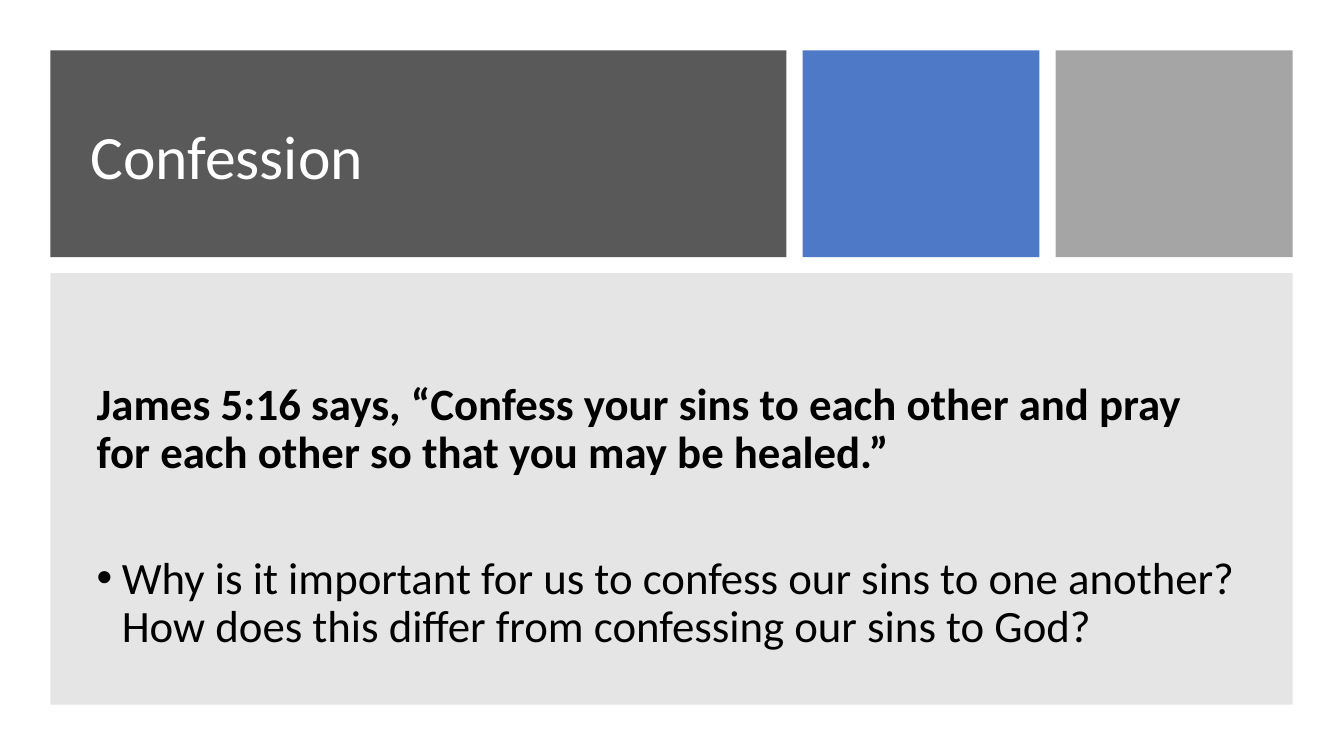
from lxml.etree import SubElement
from pptx import Presentation
from pptx.dml.color import RGBColor
from pptx.enum.shapes import MSO_SHAPE
from pptx.enum.text import MSO_ANCHOR
from pptx.oxml.ns import qn
from pptx.util import Inches, Pt

TITLE = "Confession"
VERSE = "James 5:16 says, “Confess your sins to each other and pray for each other so that you may be healed.”"
QUESTION = (
    "Why is it important for us to confess our sins to one another? "
    "How does this differ from confessing our sins to God?"
)

THEME = {
    "font": "Calibri",
    "title_size": 44,
    "body_size": 32,
    "title_color": "FFFFFF",
    "body_color": "000000",
    "panel": ("808080", 20),
}
TOP_TILES = [
    (7.3, "595959", 100),
    (2.35, "4472C4", 95),
    (2.35, "A5A5A5", 100),
]
MARGIN = 0.5
GAP = 0.16
TILE_HEIGHT = 2.05
PANEL_HEIGHT = 4.28
BULLET_INDENT = 0.25


def add_panel(slide, left, top, width, height, color, opacity):
    shape = slide.shapes.add_shape(
        MSO_SHAPE.RECTANGLE, Inches(left), Inches(top), Inches(width), Inches(height)
    )
    shape.shadow.inherit = False
    shape.line.fill.background()
    shape.fill.solid()
    shape.fill.fore_color.rgb = RGBColor.from_string(color)
    if opacity < 100:
        color_element = shape.fill._xPr.find(qn("a:solidFill"))[0]
        SubElement(color_element, qn("a:alpha"), val=str(opacity * 1000))


def add_text_frame(slide, left, top, width, height):
    box = slide.shapes.add_textbox(Inches(left), Inches(top), Inches(width), Inches(height))
    frame = box.text_frame
    frame.word_wrap = True
    frame.vertical_anchor = MSO_ANCHOR.MIDDLE
    return frame


def write(paragraph, text, size, color, bold=False, space_before=0, bullet=False):
    paragraph.line_spacing = 0.9
    paragraph.space_before = Pt(space_before)
    run = paragraph.add_run()
    run.text = text
    run.font.name = THEME["font"]
    run.font.size = Pt(size)
    run.font.bold = bold
    run.font.color.rgb = RGBColor.from_string(color)
    if bullet:
        properties = paragraph._p.get_or_add_pPr()
        properties.set("marL", str(Inches(BULLET_INDENT)))
        properties.set("indent", str(-Inches(BULLET_INDENT)))
        SubElement(properties, qn("a:buFont"), typeface="Arial")
        SubElement(properties, qn("a:buChar"), char="•")


def main():
    presentation = Presentation()
    presentation.slide_width = Inches(13.33)
    presentation.slide_height = Inches(7.5)
    slide = presentation.slides.add_slide(presentation.slide_layouts[6])

    left = MARGIN
    for width, color, opacity in TOP_TILES:
        add_panel(slide, left, MARGIN, width, TILE_HEIGHT, color, opacity)
        left += width + GAP
    panel_width = left - GAP - MARGIN
    panel_top = MARGIN + TILE_HEIGHT + GAP
    add_panel(slide, MARGIN, panel_top, panel_width, PANEL_HEIGHT, *THEME["panel"])

    title = add_text_frame(slide, 0.8, 0.8, 6.66, 1.56)
    write(title.paragraphs[0], TITLE, THEME["title_size"], THEME["title_color"])

    body = add_text_frame(slide, 0.86, 3.61, 11.59, 3.04)
    body_format = {"size": THEME["body_size"], "color": THEME["body_color"]}
    write(body.paragraphs[0], VERSE, bold=True, **body_format)
    write(body.add_paragraph(), QUESTION, space_before=55, bullet=True, **body_format)

    presentation.save("out.pptx")


if __name__ == "__main__":
    main()
